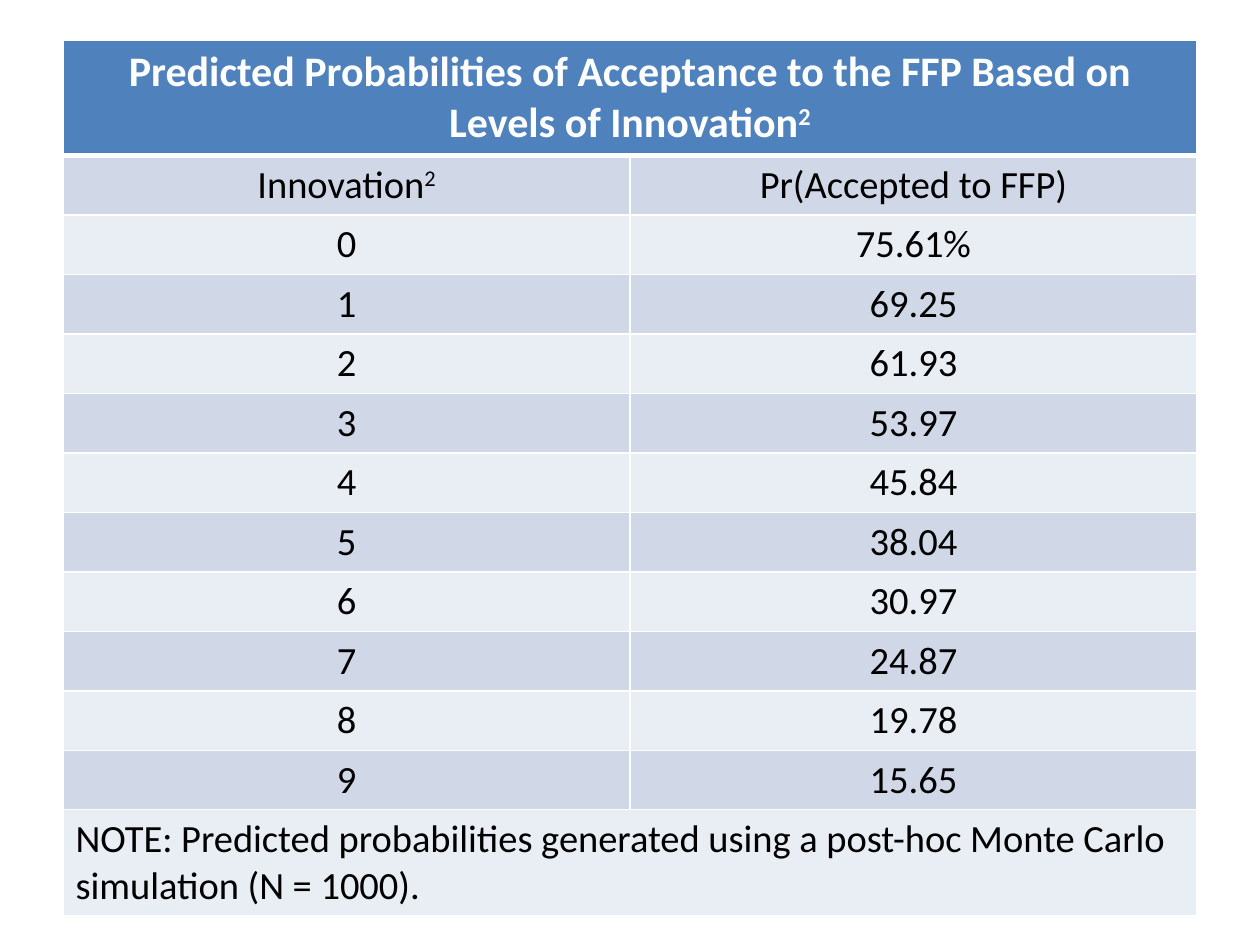
from pptx import Presentation
from pptx.dml.color import RGBColor as RGB
from pptx.enum.text import MSO_ANCHOR as Anchor, PP_ALIGN as Align
from pptx.oxml import parse_xml
from pptx.oxml.ns import nsdecls
from pptx.util import Inches, Pt


def color(code):
    return RGB.from_string(code)


def style(cell, fill, ink="000000", size=22, bold=False, align=Align.CENTER, base=1):
    cell.vertical_anchor = Anchor.MIDDLE
    # Borders go ahead of the fill in the cell properties
    for side in ("L", "R", "T", "B"):
        width = Pt(base if side == "B" else 1)
        cell._tc.get_or_add_tcPr().append(parse_xml(
            f'<a:ln{side} {nsdecls("a")} w="{width}"><a:solidFill>'
            f'<a:srgbClr val="FFFFFF"/></a:solidFill></a:ln{side}>'))
    cell.fill.solid()
    cell.fill.fore_color.rgb = color(fill)
    para = cell.text_frame.paragraphs[0]
    para.alignment = align
    for run in para.runs:
        font = run.font
        font.name, font.size, font.bold = "Calibri", Pt(size), bold
        font.color.rgb = color(ink)


deck = Presentation()
deck.slide_width, deck.slide_height = Inches(10), Inches(7.5)
slide = deck.slides.add_slide(deck.slide_layouts[6])

title = "Predicted Probabilities of Acceptance to the FFP Based on Levels of Innovation"
note = ("NOTE: Predicted probabilities generated using a post-hoc "
        "Monte Carlo simulation (N = 1000).")
odds = ["75.61%", "69.25", "61.93", "53.97", "45.84",
        "38.04", "30.97", "24.87", "19.78", "15.65"]
body = [("Innovation", "Pr(Accepted to FFP)")]
body += [(str(level), value) for level, value in enumerate(odds)]
bands = ("D0D8E8", "E9EDF4")

# Table grid
count = len(body) + 2
table = slide.shapes.add_table(
    count, 2, Inches(0.5), Inches(0.32), Inches(9), Inches(6.87)).table
heights = [0.89] + [0.47] * len(body) + [0.81]
for row, height in zip(table.rows, heights):
    row.height = Inches(height)
head, foot = table.cell(0, 0), table.cell(count - 1, 0)
head.merge(table.cell(0, 1))
foot.merge(table.cell(count - 1, 1))

# Text
head.text_frame.text = title
foot.text_frame.text = note
for r, pair in enumerate(body, 1):
    for c, text in enumerate(pair):
        table.cell(r, c).text_frame.text = text

# Raised 2 after "Innovation"
for cell in (head, table.cell(1, 0)):
    run = cell.text_frame.paragraphs[0].add_run()
    run.text = "2"
    run.font._element.set("baseline", "30000")

# Fills, borders and fonts
for c in range(2):
    style(table.cell(0, c), "4F81BD", "FFFFFF", 24, True, base=3)
    for r in range(len(body)):
        style(table.cell(r + 1, c), bands[r % 2])
    style(table.cell(count - 1, c), bands[1], align=Align.LEFT)
foot.vertical_anchor = Anchor.TOP

deck.save("out.pptx")
